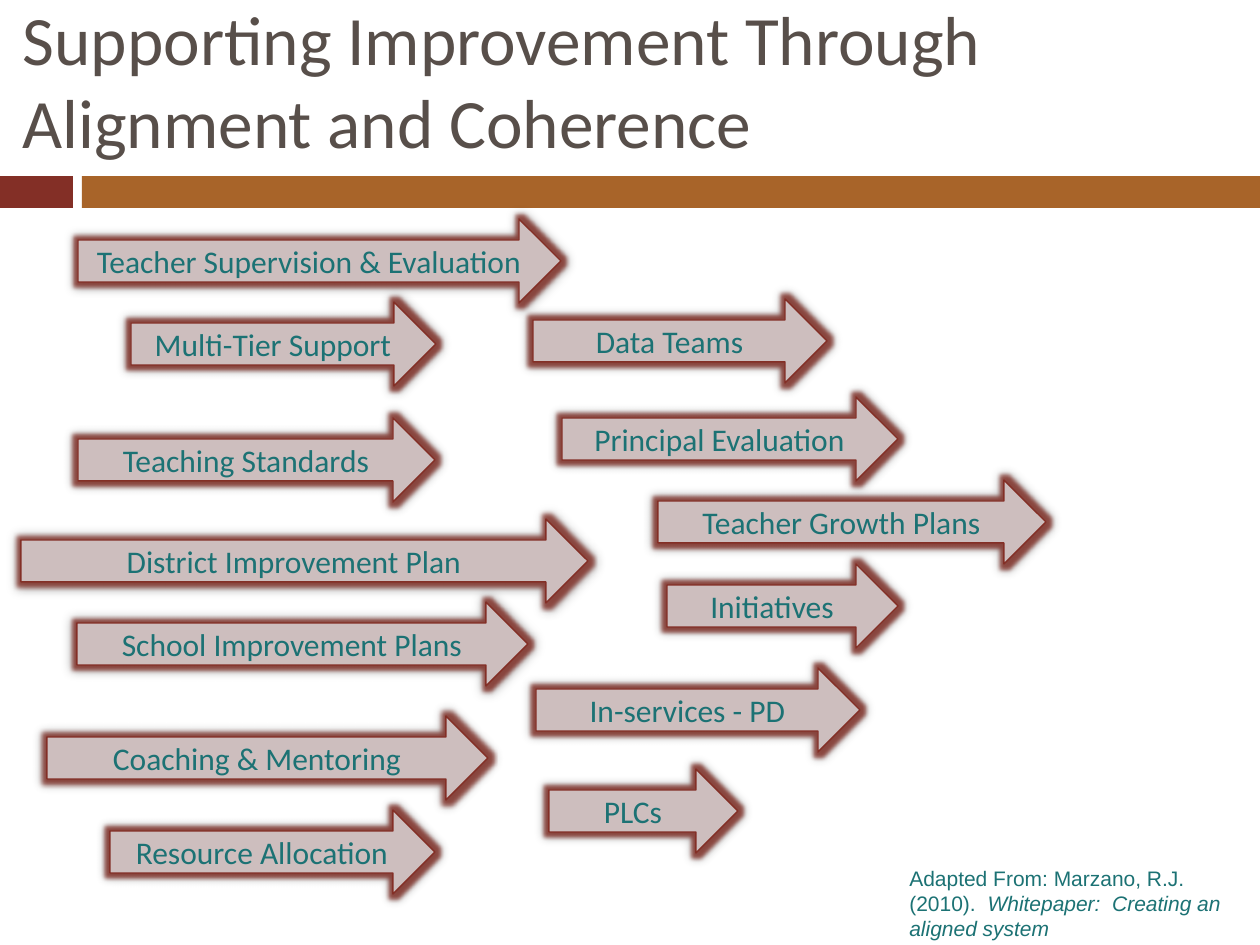
from lxml.etree import SubElement
from pptx import Presentation
from pptx.dml.color import RGBColor
from pptx.enum.shapes import MSO_SHAPE as Shape
from pptx.enum.text import MSO_ANCHOR as Anchor, MSO_AUTO_SIZE as AutoSize, PP_ALIGN as Align
from pptx.oxml.ns import qn
from pptx.util import Emu, Pt

TITLE = "Supporting Improvement Through Alignment and Coherence"
CITATION = [
    ("Adapted From: Marzano, R.J. (2010).  ", False),
    ("Whitepaper:  Creating an aligned system", True),
]
COLORS = {
    "title": "584F4A",
    "text": "1C7274",
    "red": "832F26",
    "orange": "A86429",
    "arrow": "CDBEBE",
    "shadow": "000000",
}
BARS = [(0, 73, "red"), (82, 1178, "orange")]
BAR_TOP, BAR_HEIGHT = 176, 32
ARROW_HEIGHT = 84
ARROWS = [
    ("Initiatives", 667, 564, 231),
    ("PLCs", 549, 769, 189),
    ("Principal Evaluation", 562, 397, 336),
    ("Teacher Supervision & Evaluation", 78, 219, 483),
    ("Teaching Standards", 78, 418, 357),
    ("Data Teams", 533, 299, 294),
    ("School Improvement Plans", 77, 602, 451),
    ("In-services - PD", 536, 668, 324),
    ("Coaching & Mentoring", 47, 716, 441),
    ("Teacher Growth Plans", 658, 480, 388),
    ("Resource Allocation", 110, 810, 325),
    ("Multi-Tier Support", 131, 302, 305),
    ("District Improvement Plan", 21, 519, 567),
]


def px(length):
    return Emu(round(length * 914400 / 126))


def box(*lengths):
    return [px(length) for length in lengths]


def rgb(name):
    return RGBColor.from_string(COLORS[name])


def style(run, font, size, color, italic=False):
    run.font.name = font
    run.font.size = Pt(size)
    run.font.color.rgb = rgb(color)
    run.font.italic = italic


def add_effect(effects, tag, color, alpha, **attributes):
    effect = SubElement(effects, qn(tag), **attributes)
    tint = SubElement(effect, qn("a:srgbClr"), val=COLORS[color])
    SubElement(tint, qn("a:alpha"), val=str(alpha * 1000))


def add_filled(slide, kind, place, fill):
    filled = slide.shapes.add_shape(kind, *box(*place))
    filled.shadow.inherit = False
    filled.fill.solid()
    filled.fill.fore_color.rgb = rgb(fill)
    filled.line.fill.background()
    return filled


def add_arrow(slide, label, left, top, width):
    arrow = add_filled(slide, Shape.RIGHT_ARROW, (left, top, width, ARROW_HEIGHT), "arrow")
    arrow.line.color.rgb = rgb("red")
    arrow.line.width = Pt(0.79)
    effects = arrow.element.spPr.find(qn("a:effectLst"))
    add_effect(effects, "a:glow", "red", 80, rad=str(Pt(5)))
    add_effect(effects, "a:outerShdw", "shadow", 43, blurRad=str(Pt(5)), dist="0", dir="0")
    frame = arrow.text_frame
    frame.text = label
    frame.vertical_anchor = Anchor.MIDDLE
    frame.paragraphs[0].alignment = Align.CENTER
    style(frame.paragraphs[0].runs[0], "Calibri", 18, "text")


deck = Presentation()
deck.slide_width, deck.slide_height = box(1260, 945)
slide = deck.slides.add_slide(deck.slide_layouts[5])

for left, width, color in BARS:
    add_filled(slide, Shape.RECTANGLE, (left, BAR_TOP, width, BAR_HEIGHT), color)

title = slide.shapes.title
title.left, title.top, title.width, title.height = box(10, 21, 1218, 116)
title.text_frame.text = TITLE
title.text_frame.auto_size = AutoSize.NONE
title.text_frame.vertical_anchor = Anchor.MIDDLE
heading = title.text_frame.paragraphs[0]
heading.alignment = Align.LEFT
style(heading.runs[0], "Calibri", 39.6, "title")

citation = slide.shapes.add_textbox(*box(897, 859, 363, 64)).text_frame
citation.word_wrap = True
for words, italic in CITATION:
    part = citation.paragraphs[0].add_run()
    part.text = words
    style(part, "Arial", 12, "text", italic)

for arrow in ARROWS:
    add_arrow(slide, *arrow)

deck.save("out.pptx")
